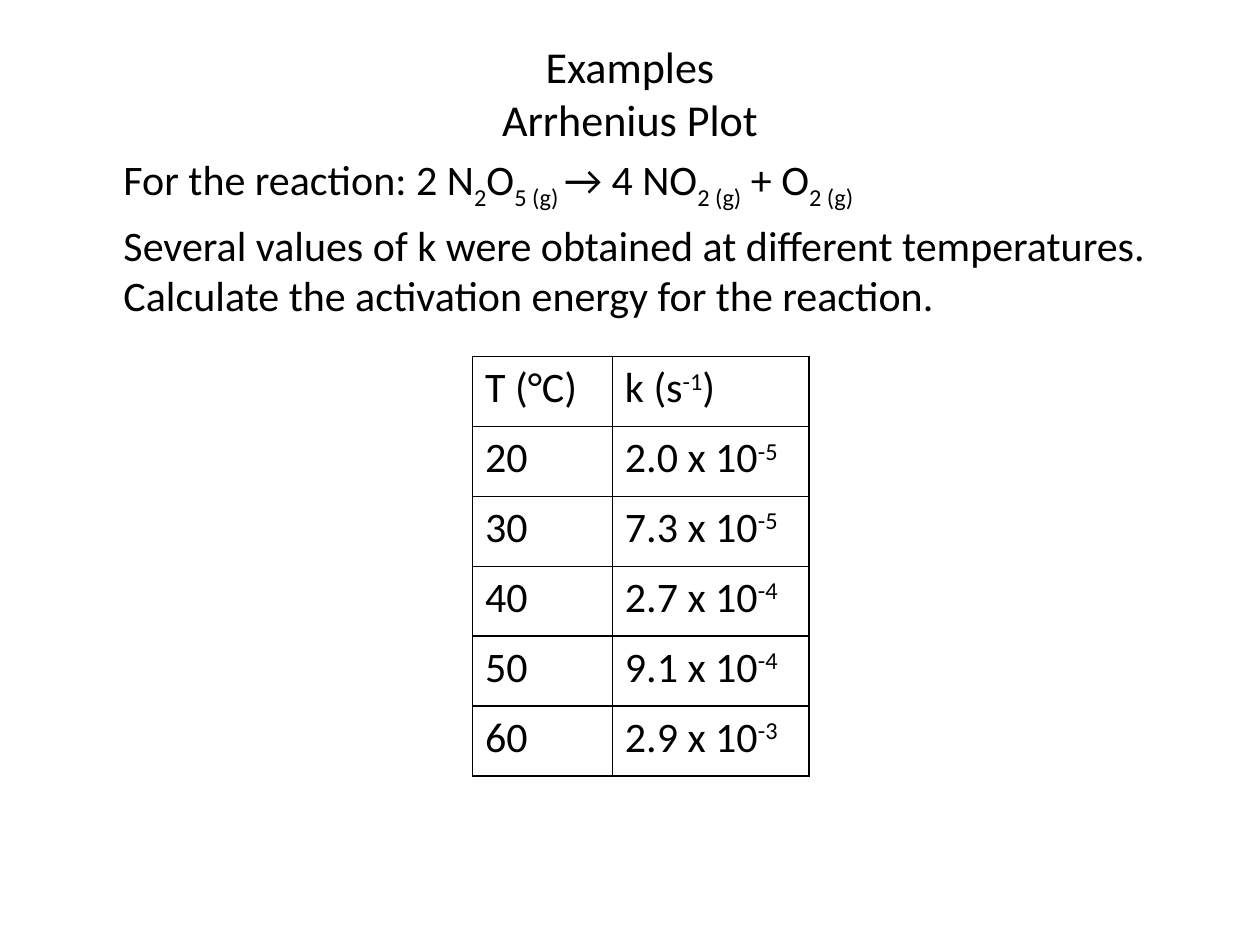
from lxml import etree
from pptx import Presentation
from pptx.dml.color import RGBColor
from pptx.enum.text import MSO_ANCHOR, MSO_AUTO_SIZE, PP_ALIGN
from pptx.oxml.ns import qn
from pptx.util import Inches, Pt

BLACK = RGBColor(0, 0, 0)
FONT = "Calibri"
LEFT, CENTER, JUSTIFY = PP_ALIGN.LEFT, PP_ALIGN.CENTER, PP_ALIGN.JUSTIFY
MIDDLE = MSO_ANCHOR.MIDDLE
NO_FIT = MSO_AUTO_SIZE.NONE
SUB, SUPER = -25, 30

# Bars enclose the raised or lowered parts of a text
TITLE = "Examples\vArrhenius Plot"
BODY = [
    ("For the reaction: 2 N|2|O|5 (g) |→ 4 NO|2 (g)| + O|2 (g)|", JUSTIFY),
    ("Several values of k were obtained at different temperatures. "
     "Calculate the activation energy for the reaction.", LEFT),
]
RATES = [
    ("T (°C)", "k (s|-1|)"),
    ("20", "2.0 x 10|-5|"),
    ("30", "7.3 x 10|-5|"),
    ("40", "2.7 x 10|-4|"),
    ("50", "9.1 x 10|-4|"),
    ("60", "2.9 x 10|-3|"),
]
COLS = (1.11, 1.56)


def place(shape, box):
    shape.left, shape.top, shape.width, shape.height = map(Inches, box)


def style(run, size):
    run.font.name = FONT
    run.font.size = Pt(size)
    run.font.color.rgb = BLACK


def write(para, text, shift):
    for i, part in enumerate(text.split("|")):
        if part:
            run = para.add_run()
            run.text = part
            style(run, 24)
            if i % 2:
                run.font._element.set("baseline", str(shift * 1000))


def add_title(slide, box):
    title = slide.shapes.title
    place(title, box)
    frame = title.text_frame
    frame.text = TITLE
    frame.auto_size = NO_FIT
    frame.vertical_anchor = MIDDLE
    para = frame.paragraphs[0]
    para.alignment = CENTER
    for run in para.runs:
        style(run, 25.2)


def add_body(slide, box):
    body = slide.placeholders[1]
    place(body, box)
    frame = body.text_frame
    frame.auto_size = NO_FIT
    for i, (text, align) in enumerate(BODY):
        para = frame.add_paragraph() if i else frame.paragraphs[0]
        para.alignment = align
        write(para, text, SUB)
        # Plain indented text, no bullet
        props = para._p.get_or_add_pPr()
        props.set("marL", str(Inches(0.38)))
        props.set("indent", "0")
        etree.SubElement(props, qn("a:buNone"))


def add_edges(cell):
    props = cell._tc.get_or_add_tcPr()
    for side in ("L", "R", "T", "B"):
        line = etree.SubElement(props, qn("a:ln" + side), w=str(Pt(1)))
        fill = etree.SubElement(line, qn("a:solidFill"))
        etree.SubElement(fill, qn("a:srgbClr"), val=str(BLACK))


def add_rates(slide, box):
    grid = slide.shapes.add_table(len(RATES), len(COLS), *map(Inches, box))
    table = grid.table
    table.first_row = table.horz_banding = False
    for col, width in zip(table.columns, COLS):
        col.width = Inches(width)
    for r, row in enumerate(RATES):
        for c, text in enumerate(row):
            cell = table.cell(r, c)
            write(cell.text_frame.paragraphs[0], text, SUPER)
            add_edges(cell)
            cell.fill.background()


def main():
    deck = Presentation()
    deck.slide_width, deck.slide_height = Inches(10), Inches(7.5)
    slide = deck.slides.add_slide(deck.slide_layouts[1])
    add_title(slide, (0.5, 0.3, 9, 0.87))
    add_body(slide, (0.5, 1.17, 9, 5.53))
    add_rates(slide, (3.75, 2.83, sum(COLS), 3.33))
    deck.save("out.pptx")


if __name__ == "__main__":
    main()
